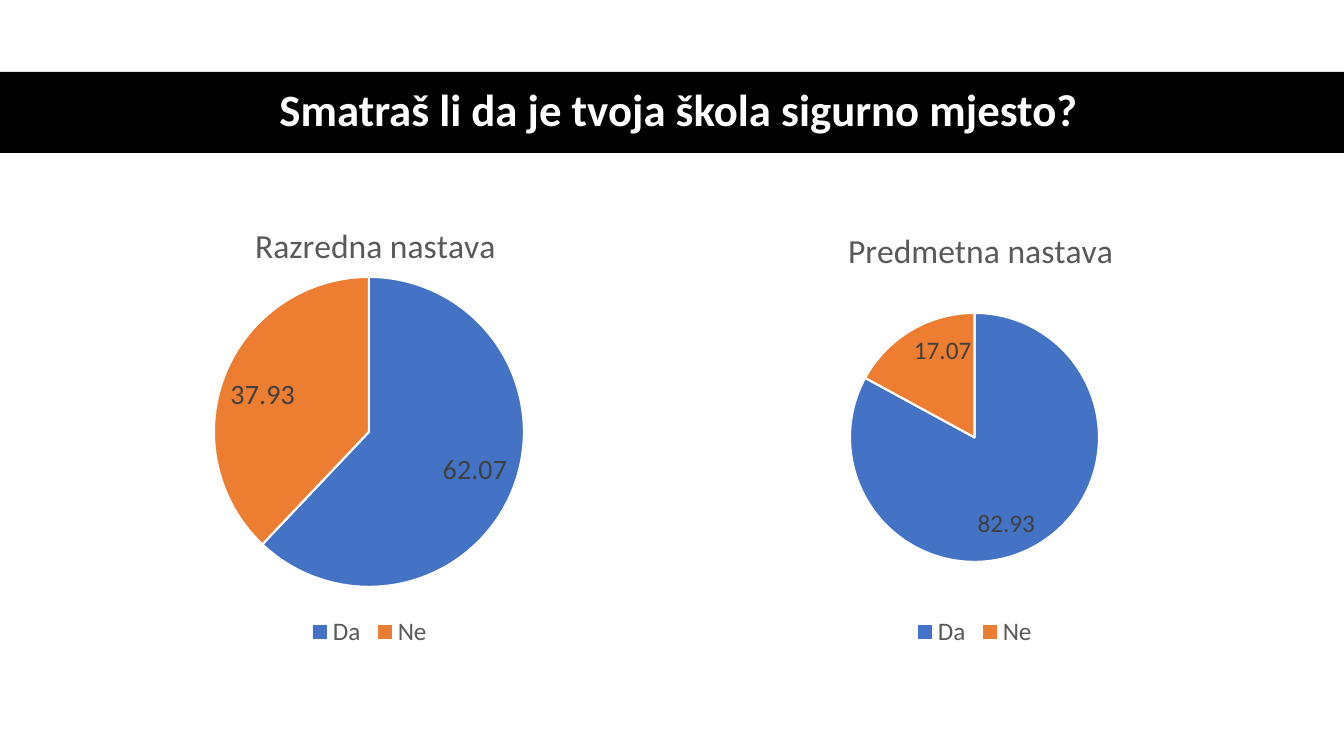
from lxml import etree
from pptx import Presentation
from pptx import util as u
from pptx.chart.data import CategoryChartData
from pptx.dml.color import RGBColor
from pptx.enum import chart as ch, shapes, text
from pptx.oxml.ns import qn


def px(n):
    return u.Emu(round(n * 914400 / 100.8))


def color(value):
    return RGBColor.from_string(value)


class Deck:
    font = "Calibri"
    grey, dark = "595959", "404040"
    slices = ("4472C4", "ED7D31")

    def __init__(self, prs):
        self.s = prs.slides.add_slide(prs.slide_layouts[6])

    def style(self, font, size, value, bold=False):
        font.name, font.size, font.bold = self.font, u.Pt(size), bold
        font.color.rgb = color(value)

    def band(self, x, y, w, h, fill):
        sp = self.s.shapes.add_shape(shapes.MSO_SHAPE.RECTANGLE, *map(px, (x, y, w, h)))
        sp.shadow.inherit = False
        sp.fill.solid()
        sp.fill.fore_color.rgb = color(fill)
        sp.line.fill.background()

    def heading(self, x, y, w, h, words):
        tf = self.s.shapes.add_textbox(*map(px, (x, y, w, h))).text_frame
        tf.word_wrap = True
        tf.vertical_anchor = text.MSO_ANCHOR.MIDDLE
        p = tf.paragraphs[0]
        p.text = words
        p.alignment = text.PP_ALIGN.CENTER
        p.line_spacing = 0.9
        self.style(p.font, 32, "FFFFFF", True)

    def place(self, element, **values):
        for old in element.findall(qn("c:layout")):
            element.remove(old)
        layout = etree.Element(qn("c:layout"))
        manual = etree.SubElement(layout, qn("c:manualLayout"))
        if "w" in values:
            etree.SubElement(manual, qn("c:layoutTarget")).set("val", "inner")
        for axis in ("x", "y"):
            etree.SubElement(manual, qn(f"c:{axis}Mode")).set("val", "edge")
        for key, value in values.items():
            etree.SubElement(manual, qn(f"c:{key}")).set("val", f"{value:.4f}")
        tx = element.find(qn("c:tx"))
        if tx is None:
            element.insert(0, layout)
        else:
            tx.addnext(layout)

    def pie(self, x, y, w, h, title, values, label_size, title_at, pie_at, diameter):
        data = CategoryChartData(number_format="General")
        data.categories = ["Da", "Ne"]
        data.add_series("Series 1", values)
        frame = self.s.shapes.add_chart(ch.XL_CHART_TYPE.PIE, *map(px, (x, y, w, h)), data)
        chart = frame.chart
        self.style(chart.font, 10, "000000")

        chart.has_title = True
        p = chart.chart_title.text_frame.paragraphs[0]
        p.text = title
        self.style(p.font, 24, self.grey)
        chart.chart_title.include_in_layout = False
        title_x, title_y = title_at
        self.place(chart.chart_title._element, x=(title_x - x) / w, y=(title_y - y) / h)

        chart.has_legend = True
        chart.legend.position = ch.XL_LEGEND_POSITION.BOTTOM
        chart.legend.include_in_layout = False
        self.style(chart.legend.font, 18, self.grey)

        plot = chart.plots[0]
        plot.vary_by_categories = True
        for i, fill in enumerate(self.slices):
            fmt = plot.series[0].points[i].format
            fmt.fill.solid()
            fmt.fill.fore_color.rgb = color(fill)
            fmt.line.color.rgb = color("FFFFFF")
            fmt.line.width = u.Pt(1.5)
        labels = plot.series[0].data_labels
        labels.show_value = True
        labels.show_percentage = False
        labels.position = ch.XL_LABEL_POSITION.INSIDE_END
        self.style(labels.font, label_size, self.dark)
        pie_x, pie_y = pie_at
        area = chart._chartSpace.chart.plotArea
        self.place(area, x=(pie_x - x) / w, y=(pie_y - y) / h, w=diameter / w, h=diameter / h)


def main():
    prs = Presentation()
    prs.slide_width, prs.slide_height = px(1344), px(756)
    deck = Deck(prs)
    deck.band(0, 72, 1344, 81, "000000")
    deck.heading(61, 71, 1236, 81, "Smatraš li da je tvoja škola sigurno mjesto?")
    deck.pie(71, 198, 597, 454, "Razredna nastava", (62.07, 37.93), 20,
             (249, 217), (214, 277), 310)
    deck.pie(676, 198, 597, 454, "Predmetna nastava", (82.93, 17.07), 18,
             (842, 222), (850, 313), 249)
    prs.save("out.pptx")


if __name__ == "__main__":
    main()
